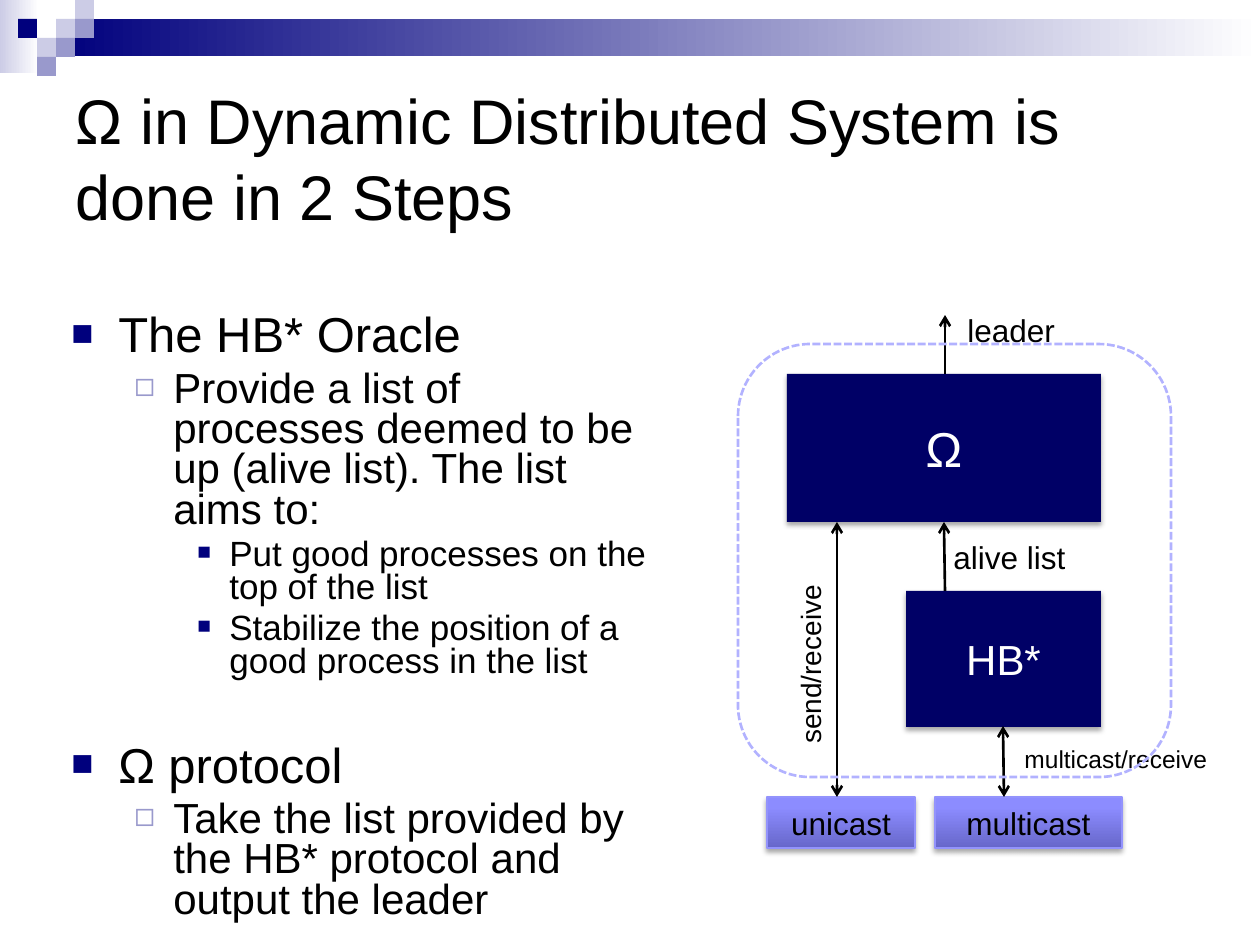
from copy import deepcopy

from lxml import etree
from pptx import Presentation, util as u
from pptx.dml import color
from pptx.enum import dml, shapes, text
from pptx.oxml import ns

PX_PER_INCH = 126
FONT = "Arial"
BLACK, WHITE, NAVY, BOX_NAVY = "000000", "FFFFFF", "00007D", "000066"
PALE, LILAC = "CCCCE6", "9999CC"
BUTTON_STOPS = [(0, "6767CA"), (80, "8C8CFF"), (100, "8E8EFF")]

# Per outline level: size, space before, left margin, hang, bullet, colour, percent
LEVELS = [
    dict(size=28, before=0, left=47, hang=47, mark="■", color=NAVY, percent=75),
    dict(size=24, before=5, left=102, hang=39, mark="◻", color=LILAC, percent=80),
    dict(size=20, before=4, left=158, hang=32, mark="■", color=NAVY, percent=65),
]
SECTION_GAP = 37
OUTLINE = [
    (0, "The HB* Oracle"),
    (1, "Provide a list of processes deemed to be up (alive list). The list aims to:"),
    (2, "Put good processes on the top of the list"),
    (2, "Stabilize the position of a good process in the list"),
    (0, "Ω protocol"),
    (1, "Take the list provided by the HB* protocol and output the leader"),
]


def px(value):
    return u.Emu(round(value * 914400 / PX_PER_INCH))


def rgb(value):
    return color.RGBColor.from_string(value)


def apply(target, values):
    for name, value in values.items():
        setattr(target, name, value)


def add_xml(parent, tag, **attributes):
    return etree.SubElement(parent, ns.qn(tag), attributes)


def write(paragraph, content, size, ink=BLACK):
    run = paragraph.add_run()
    run.text = content
    apply(run.font, {"size": u.Pt(size), "name": FONT})
    run.font.color.rgb = rgb(ink)


def paint_gradient(shape, stops, angle):
    shape.fill.gradient()
    shape.fill.gradient_angle = angle
    stop_list = shape._element.spPr.find(".//" + ns.qn("a:gsLst"))
    for _ in stops[2:]:
        stop_list.append(deepcopy(stop_list[0]))
    for stop, (percent, value) in zip(shape.fill.gradient_stops, stops):
        stop.position = percent / 100
        stop.color.rgb = rgb(value)


def add_box(slide, box, fill=None, kind=shapes.MSO_SHAPE.RECTANGLE, angle=0):
    """Add a preset shape; fill is a hex colour, a list of stops or None."""
    shape = slide.shapes.add_shape(kind, *map(px, box))
    shape.shadow.inherit = False
    shape.line.fill.background()
    if fill is None:
        shape.fill.background()
    elif isinstance(fill, list):
        paint_gradient(shape, fill, angle)
    else:
        shape.fill.solid()
        shape.fill.fore_color.rgb = rgb(fill)
    return shape


def outline(shape, value, width):
    shape.line.color.rgb = rgb(value)
    shape.line.width = u.Pt(width)


def add_node(slide, box, content, size, ink, fill):
    """Add a labelled diagram box with a soft drop shadow."""
    shape = add_box(slide, box, fill, angle=90)
    effects = shape._element.spPr.find(ns.qn("a:effectLst"))
    shadow = add_xml(effects, "a:outerShdw", blurRad="39370", dist="22860",
                     dir="5400000", rotWithShape="0")
    shade = add_xml(shadow, "a:srgbClr", val=BLACK)
    add_xml(shade, "a:alpha", val="35000")
    shape.text_frame.vertical_anchor = text.MSO_ANCHOR.MIDDLE
    paragraph = shape.text_frame.paragraphs[0]
    paragraph.alignment = text.PP_ALIGN.CENTER
    write(paragraph, content, size, ink)
    return shape


def add_label(slide, box, content, size, rotation=0):
    label = slide.shapes.add_textbox(*map(px, box))
    label.rotation = rotation
    label.text_frame.word_wrap = False
    write(label.text_frame.paragraphs[0], content, size)


def add_arrow(slide, start, end, both=False):
    arrow = slide.shapes.add_connector(
        shapes.MSO_CONNECTOR.STRAIGHT, *map(px, start + end))
    outline(arrow, BLACK, 1.5)
    line = arrow.line._get_or_add_ln()
    if both:
        add_xml(line, "a:headEnd", type="arrow")
    add_xml(line, "a:tailEnd", type="arrow")
    add_xml(arrow._element.spPr, "a:effectLst")


def add_banner(slide):
    add_box(slide, (0, 0, 39, 73), [(0, PALE), (100, WHITE)])
    add_box(slide, (57, 19, 1203, 37), [(0, NAVY), (100, WHITE)])
    side = 19
    for column, row, fill in [(3, 1, PALE), (4, 0, PALE), (4, 1, LILAC), (2, 2, PALE),
                              (1, 1, NAVY), (3, 2, LILAC), (2, 3, LILAC)]:
        add_box(slide, ((column - 1) * side + 18, row * side, side, side), fill)


def add_title(slide, content):
    title = slide.shapes.title
    apply(title, dict(zip(("left", "top", "width", "height"),
                          map(px, (63, 63, 1134, 189)))))
    apply(title.text_frame, {"vertical_anchor": text.MSO_ANCHOR.MIDDLE,
                             "word_wrap": True,
                             "auto_size": text.MSO_AUTO_SIZE.NONE})
    paragraph = title.text_frame.paragraphs[0]
    paragraph.alignment = text.PP_ALIGN.LEFT
    write(paragraph, content, 36)


def add_outline(slide):
    frame = slide.shapes.add_textbox(*map(px, (59, 236, 606, 536))).text_frame
    apply(frame, {"word_wrap": True, "margin_top": px(79)})
    for index, (depth, content) in enumerate(OUTLINE):
        level = LEVELS[depth]
        paragraph = frame.add_paragraph() if index else frame.paragraphs[0]
        gap = SECTION_GAP if index and depth == 0 else level["before"]
        apply(paragraph, {"level": depth, "line_spacing": 0.8,
                          "space_before": u.Pt(gap)})
        properties = paragraph._p.get_or_add_pPr()
        properties.set("marL", str(px(level["left"])))
        properties.set("indent", str(-px(level["hang"])))
        bullet_color = add_xml(properties, "a:buClr")
        add_xml(bullet_color, "a:srgbClr", val=level["color"])
        add_xml(properties, "a:buSzPct", val=str(level["percent"] * 1000))
        add_xml(properties, "a:buFont", typeface=FONT)
        add_xml(properties, "a:buChar", char=level["mark"])
        write(paragraph, content, level["size"])


def add_diagram(slide):
    # Oracle and leader election, with their links
    add_node(slide, (787, 374, 314, 148), "Ω", 28, WHITE, BOX_NAVY)
    add_node(slide, (906, 591, 195, 136), "HB*", 24, WHITE, BOX_NAVY)
    add_arrow(slide, (945, 374), (945, 315))
    add_label(slide, (955, 305, 113, 50), "leader", 18)
    add_arrow(slide, (945, 591), (944, 522))
    add_label(slide, (941, 532, 142, 50), "alive list", 18)

    # Communication layer
    for left, width, content in [(767, 148, "unicast"), (935, 187, "multicast")]:
        button = add_node(slide, (left, 797, width, 51), content, 18, BLACK, BUTTON_STOPS)
        outline(button, "9393FC", 0.75)
    add_arrow(slide, (837, 522), (837, 797), both=True)
    add_arrow(slide, (1004, 797), (1003, 726), both=True)
    add_label(slide, (718, 640, 185, 47), "send/receive", 16, rotation=270)
    add_label(slide, (1012, 738, 209, 43), "multicast/receive", 14)

    # Dashed frame around the service
    border = add_box(slide, (738, 344, 433, 433), kind=shapes.MSO_SHAPE.ROUNDED_RECTANGLE)
    outline(border, "B2B2FF", 1.5)
    border.line.dash_style = dml.MSO_LINE.SQUARE_DOT


def main():
    presentation = Presentation()
    apply(presentation, {"slide_width": px(1260), "slide_height": px(945)})
    slide = presentation.slides.add_slide(presentation.slide_layouts[5])
    add_banner(slide)
    add_title(slide, "Ω in Dynamic Distributed System is done in 2 Steps")
    add_outline(slide)
    add_diagram(slide)
    presentation.save("out.pptx")


if __name__ == "__main__":
    main()
